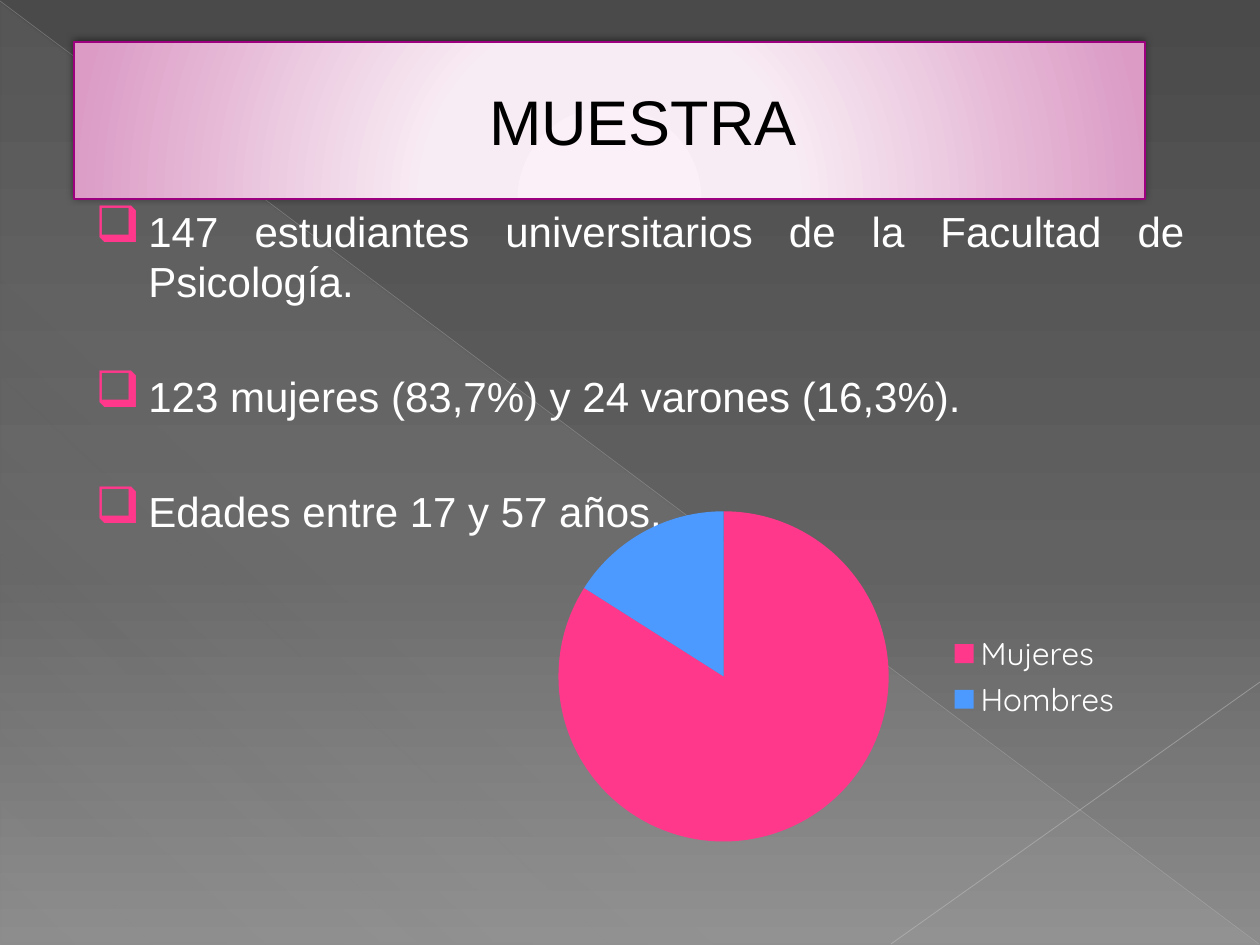
from dataclasses import dataclass

from lxml.etree import SubElement
from pptx import Presentation
from pptx.chart.data import CategoryChartData
from pptx.dml.color import RGBColor
from pptx.enum.chart import XL_CHART_TYPE as Chart, XL_LEGEND_POSITION as Legend
from pptx.enum.shapes import MSO_CONNECTOR as Link, MSO_SHAPE as Shape
from pptx.enum.text import MSO_ANCHOR as Anchor, PP_ALIGN as Align
from pptx.oxml import parse_xml
from pptx.oxml.ns import nsdecls, qn
from pptx.util import Emu, Pt


@dataclass(frozen=True)
class Theme:
    font: str = "Arial"
    label: str = "Quicksand"
    big: int = 36
    mid: int = 24
    small: int = 18
    white: str = "FFFFFF"
    black: str = "000000"
    pink: str = "FF388C"
    blue: str = "4C99FF"
    edge: str = "9C007F"
    rim: str = "B12761"
    # Gradient stops: position %, colour, opacity %
    back: tuple = ((0, "4A4A4A", 100), (60, "626262", 100), (100, "8C8C8C", 100))
    sheen: tuple = ((0, "D2D2D2", 10), (70, "D2D2D2", 8), (100, "D2D2D2", 1))
    glow: tuple = ((0, "FBF0F7", 100), (34, "F8ECF4", 100), (100, "DB9BC5", 100))


T = Theme()
POINTS = (
    "147 estudiantes universitarios de la Facultad de Psicología.",
    "123 mujeres (83,7%) y 24 varones (16,3%).",
    "Edades entre 17 y 57 años.",
)
SHARES = (("Mujeres", 84, T.pink), ("Hombres", 16, T.blue))


def px(n):
    return Emu(round(n * 914400 / 126))


def rgb(code):
    return RGBColor.from_string(code)


def hue(code, alpha=100):
    return f'<a:srgbClr val="{code}"><a:alpha val="{alpha * 1000}"/></a:srgbClr>'


def linear(deg):
    return f'<a:lin ang="{deg * 60000}" scaled="0"/>'


def blend(fill, props, stops, way):
    """Swap the solid fill in props for a gradient."""
    fill.solid()
    marks = "".join(f'<a:gs pos="{at * 1000}">{hue(code, alpha)}</a:gs>'
                    for at, code, alpha in stops)
    grad = parse_xml(f'<a:gradFill {nsdecls("a")} rotWithShape="1">'
                     f'<a:gsLst>{marks}</a:gsLst>{way}</a:gradFill>')
    props.replace(props.find(qn("a:solidFill")), grad)


def style(font, name, size, code):
    font.name, font.size = name, Pt(size)
    font.color.rgb = rgb(code)


def add_run(para, text, size, code):
    run = para.add_run()
    run.text = text
    style(run.font, T.font, size, code)
    return run


def add_line(slide, start, end, code, width, alpha):
    line = slide.shapes.add_connector(Link.STRAIGHT, *map(px, start + end))
    line.line.width = Pt(width)
    line.line.color.rgb = rgb(code)
    props = line._element.spPr
    tint = props.find(".//" + qn("a:srgbClr"))
    SubElement(tint, qn("a:alpha"), val=str(alpha * 1000))
    SubElement(props, qn("a:effectLst"))


def add_backdrop(slide):
    fill = slide.background.fill
    fill.solid()
    blend(fill, slide._element.find(".//" + qn("p:bgPr")), T.back, linear(90))
    wedge = slide.shapes.add_shape(Shape.RIGHT_TRIANGLE,
                                   *map(px, (1, 3, 1258, 942)))
    wedge.shadow.inherit = False
    wedge.line.fill.background()
    blend(wedge.fill, wedge._element.spPr, T.sheen, linear(133))
    add_line(slide, (0, 1), (1259, 944), "BFBFBF", 0.39, 35)
    add_line(slide, (1260, 682), (891, 944), "C6C6C6", 0.47, 45)


def add_title(slide, text):
    title = slide.shapes.title
    slide.shapes._spTree.append(title._element)  # in front of the backdrop
    title.left, title.top, title.width, title.height = map(px, (74, 42, 1071, 157))
    title.line.width = Pt(0.75)
    title.line.color.rgb = rgb(T.edge)
    props = title._element.spPr
    blend(title.fill, props, T.glow,
          '<a:path path="circle"><a:fillToRect l="50000" t="155000" '
          'r="50000" b="-55000"/></a:path>')
    props.append(parse_xml(
        f'<a:effectLst {nsdecls("a")}><a:outerShdw blurRad="{Pt(5)}" '
        f'dist="{Pt(2)}" dir="{245 * 60000}" rotWithShape="0">'
        f'{hue(T.black, 50)}</a:outerShdw></a:effectLst>'))
    frame = title.text_frame
    frame.vertical_anchor = Anchor.MIDDLE
    para = frame.paragraphs[0]
    para.alignment = Align.CENTER
    para._p.get_or_add_pPr().set("marL", str(px(67)))
    run = add_run(para, text, T.big, T.black)
    run._r.get_or_add_rPr().insert(0, parse_xml(
        f'<a:ln {nsdecls("a")} w="{Pt(0.5)}"><a:solidFill>{hue(T.rim)}'
        '</a:solidFill></a:ln>'))


def add_bullet(para):
    props = para._p.get_or_add_pPr()
    props.set("marL", str(px(62)))
    props.set("indent", str(px(-53)))
    tint = SubElement(props, qn("a:buClr"))
    SubElement(tint, qn("a:srgbClr"), val=T.pink)
    SubElement(props, qn("a:buSzPct"), val="120000")
    SubElement(props, qn("a:buChar"), char="❑")


def add_points(slide, texts):
    frame = slide.shapes.add_textbox(*map(px, (74, 199, 1123, 382))).text_frame
    frame.word_wrap = True
    for i, text in enumerate(texts):
        para = frame.add_paragraph() if i else frame.paragraphs[0]
        para.alignment = Align.JUSTIFY
        para.space_before = Pt(37 if i else 5)
        add_bullet(para)
        add_run(para, text, T.mid, T.white)


def add_pie(slide, shares):
    data = CategoryChartData()
    data.categories = [name for name, _, _ in shares]
    data.add_series("Series 1", [value for _, value, _ in shares])
    chart = slide.shapes.add_chart(Chart.PIE, *map(px, (530, 493, 605, 367)),
                                   data).chart
    chart.has_title = False
    style(chart.font, T.label, T.small, T.white)
    chart.has_legend = True
    chart.legend.position = Legend.RIGHT
    chart.legend.include_in_layout = False
    plot = chart.plots[0]
    plot.vary_by_categories = True
    for i, (_, _, code) in enumerate(shares):
        look = plot.series[0].points[i].format
        look.fill.solid()
        look.fill.fore_color.rgb = rgb(code)
        look.line.fill.background()
    area = chart._chartSpace.chart.plotArea
    for old in area.findall(qn("c:layout")):
        area.remove(old)
    layout = parse_xml(f'<c:layout {nsdecls("c")}><c:manualLayout/></c:layout>')
    for tag, val in (("layoutTarget", "inner"), ("xMode", "edge"),
                     ("yMode", "edge"), ("x", 0.04), ("y", 0.05),
                     ("w", 0.56), ("h", 0.9)):
        SubElement(layout[0], qn("c:" + tag), val=str(val))
    area.insert(0, layout)


def main():
    deck = Presentation()
    deck.slide_width, deck.slide_height = px(1260), px(945)
    slide = deck.slides.add_slide(deck.slide_layouts[5])
    add_backdrop(slide)
    add_title(slide, "MUESTRA")
    add_points(slide, POINTS)
    add_pie(slide, SHARES)
    deck.save("out.pptx")


if __name__ == "__main__":
    main()
